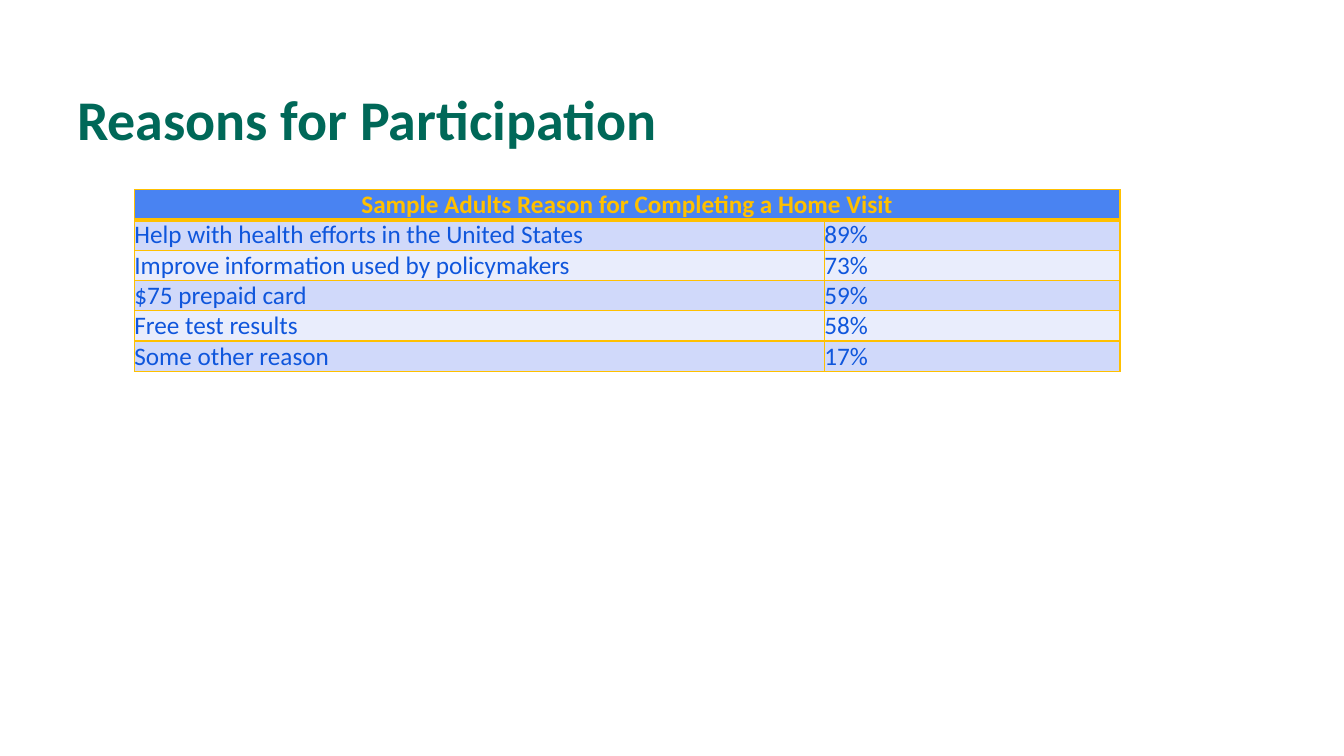
import pptx
import pptx.dml.color
import pptx.enum.text
import pptx.oxml.ns
import pptx.util
from lxml import etree

Pt = pptx.util.Pt
FONT = "Calibri"
GOLD = "FFC000"
BANDS = ("D0D9FA", "E9EDFC")
HEADING = "Sample Adults Reason for Completing a Home Visit"
REASONS = [
    ("Help with health efforts in the United States", "89%"),
    ("Improve information used by policymakers", "73%"),
    ("$75 prepaid card", "59%"),
    ("Free test results", "58%"),
    ("Some other reason", "17%"),
]


def rgb(color):
    """Return the colour for a hex string."""
    return pptx.dml.color.RGBColor.from_string(color)


def add_run(p, text, size, color, bold=False):
    """Add one formatted run to a paragraph."""
    r = p.add_run()
    r.text = text
    r.font.name = FONT
    r.font.size = Pt(size)
    r.font.bold = bold
    r.font.color.rgb = rgb(color)


def set_borders(cell, bottom=1):
    """Draw gold lines on the four sides of a cell."""
    qn = pptx.oxml.ns.qn
    tc_pr = cell._tc.get_or_add_tcPr()
    for side, width in (("L", 1), ("R", 1), ("T", 1), ("B", bottom)):
        ln = etree.SubElement(tc_pr, qn(f"a:ln{side}"), w=str(Pt(width)))
        fill = etree.SubElement(ln, qn("a:solidFill"))
        etree.SubElement(fill, qn("a:srgbClr"), val=GOLD)


def style_cell(cell, fill, bottom=1):
    """Set the borders, fill, margins and anchor of a cell."""
    set_borders(cell, bottom)
    cell.fill.solid()
    cell.fill.fore_color.rgb = rgb(fill)
    cell.margin_left = cell.margin_right = cell.margin_top = cell.margin_bottom = 0
    cell.vertical_anchor = pptx.enum.text.MSO_ANCHOR.MIDDLE


def add_title(slide, left, top, width, height):
    """Place the slide title at the bottom of its box."""
    sp = slide.shapes.add_textbox(Pt(left), Pt(top), Pt(width), Pt(height))
    tf = sp.text_frame
    tf.word_wrap = True
    tf.vertical_anchor = pptx.enum.text.MSO_ANCHOR.BOTTOM
    p = tf.paragraphs[0]
    p.line_spacing = Pt(40)
    add_run(p, "Reasons for Participation", 40, "006858", True)


def add_reasons(slide, left, top, width, row_height):
    """Place the table of reasons under a merged heading row."""
    count = len(REASONS) + 1
    table = slide.shapes.add_table(
        count, 2, Pt(left), Pt(top), Pt(width), Pt(row_height * count)
    ).table
    table.columns[0].width = Pt(width * 0.7)
    table.columns[1].width = Pt(width * 0.3)
    for cell in table.rows[0].cells:
        style_cell(cell, "4983F2", bottom=3)
    heading = table.cell(0, 0)
    heading.merge(table.cell(0, 1))
    p = heading.text_frame.paragraphs[0]
    p.alignment = pptx.enum.text.PP_ALIGN.CENTER
    add_run(p, HEADING, 18, GOLD, True)
    for i, reason in enumerate(REASONS):
        for j, text in enumerate(reason):
            cell = table.cell(i + 1, j)
            style_cell(cell, BANDS[i % 2])
            add_run(cell.text_frame.paragraphs[0], text, 18, "0F56DC")


def main():
    """Build the slide and save it."""
    prs = pptx.Presentation()
    prs.slide_width = Pt(960)
    prs.slide_height = Pt(540)
    slide = prs.slides.add_slide(prs.slide_layouts[6])
    add_title(slide, 48, 21.6, 864, 90)
    add_reasons(slide, 96, 135.5, 704, 14.4)
    prs.save("out.pptx")


if __name__ == "__main__":
    main()
